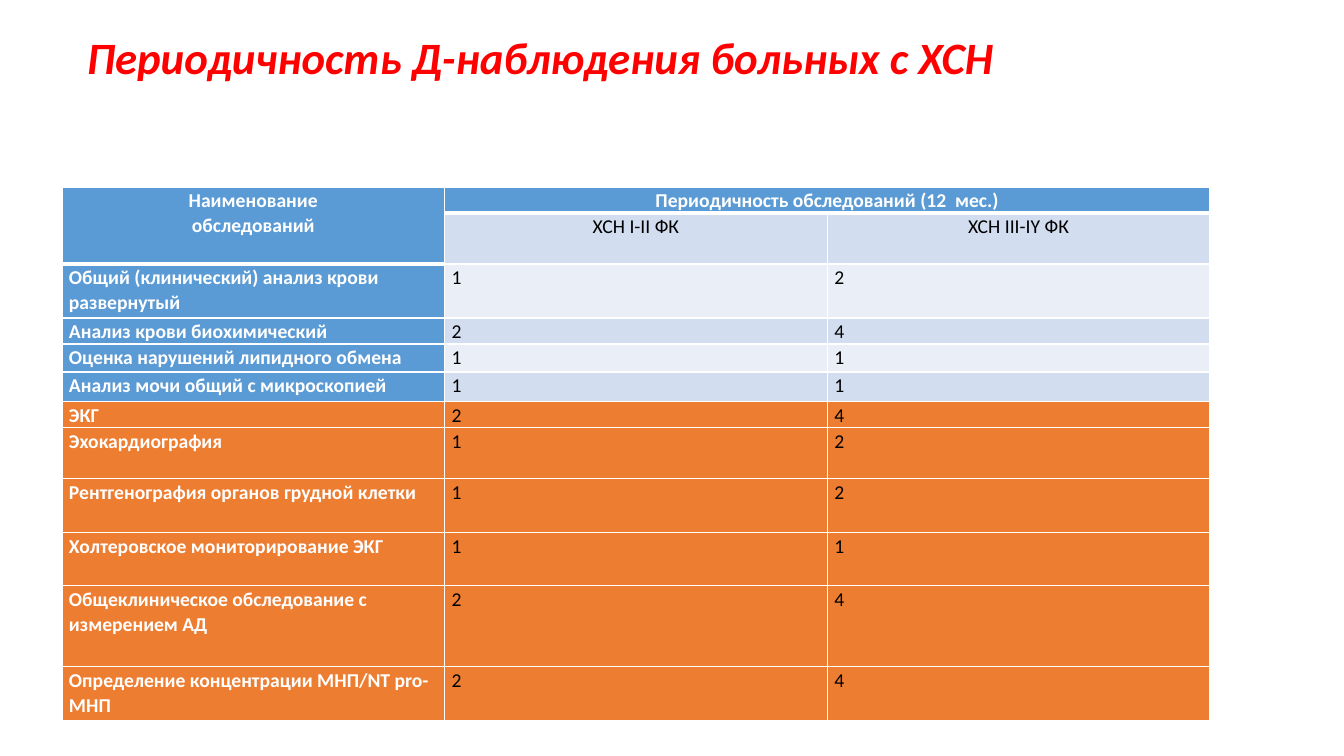
import dataclasses

import lxml.etree
import pptx
import pptx.dml.color
import pptx.enum.text
import pptx.oxml.ns
import pptx.util

EMU_PER_PX = 914400 / 100.8
ROW_HEIGHTS = [26, 51, 54, 26, 28, 30, 26, 51, 54, 53, 81, 54]
TITLE = "Периодичность Д-наблюдения больных с ХСН"
HEADER = ["Наименование\nобследований", "Периодичность обследований (12  мес.)", ""]
SUBHEADER = ["", "ХСН I-II ФК", "ХСН III-IY ФК"]
LAB_TESTS = [
    ["Общий (клинический) анализ крови развернутый", "1", "2"],
    ["Анализ крови биохимический", "2", "4"],
    ["Оценка нарушений липидного обмена", "1", "1"],
    ["Анализ мочи общий с микроскопией", "1", "1"],
]
EXAMINATIONS = [
    ["ЭКГ", "2", "4"],
    ["Эхокардиография", "1", "2"],
    ["Рентгенография органов грудной клетки", "1", "2"],
    ["Холтеровское мониторирование ЭКГ", "1", "1"],
    ["Общеклиническое обследование с измерением АД", "2", "4"],
    ["Определение концентрации МНП/NT pro-МНП", "2", "4"],
]


@dataclasses.dataclass(frozen=True)
class Theme:
    """Colours and type of the slide."""

    font: str = "Calibri"
    title_size: int = 32
    table_size: int = 14
    title: str = "FF0000"
    white: str = "FFFFFF"
    black: str = "000000"
    blue: str = "5B9BD5"
    orange: str = "ED7D31"
    bands: tuple = ("EAEFF7", "D2DEEF")


THEME = Theme()


def px(length):
    """Turn a length in px into EMU."""
    return pptx.util.Emu(round(length * EMU_PER_PX))


def format_para(para, size, colour, bold, italic=False):
    """Set the type of every run in a paragraph."""
    for span in para.runs:
        span.font.name = THEME.font
        span.font.size = pptx.util.Pt(size)
        span.font.bold = bold
        span.font.italic = italic
        span.font.color.rgb = pptx.dml.color.RGBColor.from_string(colour)


def set_borders(cell, bottom_width):
    """Draw white lines of 1 pt round a cell, with a chosen bottom line."""
    properties = cell._tc.get_or_add_tcPr()
    qn = pptx.oxml.ns.qn
    widths = {"a:lnL": 1, "a:lnR": 1, "a:lnT": 1, "a:lnB": bottom_width}
    for index, (tag, width) in enumerate(widths.items()):
        line = lxml.etree.Element(qn(tag), w=str(pptx.util.Pt(width)))
        fill = lxml.etree.SubElement(line, qn("a:solidFill"))
        lxml.etree.SubElement(fill, qn("a:srgbClr"), val=THEME.white)
        properties.insert(index, line)


def fill_cell(cell, text, fill, strong, centred, bottom_width):
    """Give a cell its words, fill and borders."""
    cell.margin_left = cell.margin_right = px(7)
    cell.margin_top = cell.margin_bottom = 0
    cell.fill.solid()
    cell.fill.fore_color.rgb = pptx.dml.color.RGBColor.from_string(fill)
    set_borders(cell, bottom_width)
    cell.text_frame.text = text
    colour = THEME.white if strong else THEME.black
    for para in cell.text_frame.paragraphs:
        para.line_spacing = 1.07
        if centred:
            para.alignment = pptx.enum.text.PP_ALIGN.CENTER
        format_para(para, THEME.table_size, colour, strong)


def add_title(page, left, top, width, height):
    """Place the title in its box."""
    box = page.shapes.add_textbox(px(left), px(top), px(width), px(height))
    frame = box.text_frame
    frame.word_wrap = True
    frame.vertical_anchor = pptx.enum.text.MSO_ANCHOR.MIDDLE
    frame.text = TITLE
    para = frame.paragraphs[0]
    para.line_spacing = 0.9
    format_para(para, THEME.title_size, THEME.title, True, True)


def add_schedule(page, left, top, width):
    """Place the examination table in its box."""
    rows = [HEADER, SUBHEADER] + LAB_TESTS + EXAMINATIONS
    columns = len(HEADER)
    frame = page.shapes.add_table(
        len(rows), columns, px(left), px(top), px(width), px(sum(ROW_HEIGHTS)))
    table = frame.table
    table.first_row = table.horz_banding = False
    for column in table.columns:
        column.width = px(width / columns)
    first_examination = len(rows) - len(EXAMINATIONS)
    for row, texts in enumerate(rows):
        table.rows[row].height = px(ROW_HEIGHTS[row])
        for column, text in enumerate(texts):
            strong = row == 0 or column == 0
            if row >= first_examination:
                fill = THEME.orange
            else:
                fill = THEME.blue if strong else THEME.bands[row % 2]
            bottom_width = 3 if row == 0 or (row == 1 and column == 0) else 1
            fill_cell(table.cell(row, column), text, fill, strong, row < 2, bottom_width)
    table.cell(0, 0).merge(table.cell(1, 0))
    table.cell(0, 1).merge(table.cell(0, 2))


def main():
    """Build the slide and save it."""
    deck = pptx.Presentation()
    deck.slide_width, deck.slide_height = px(1344), px(756)
    page = deck.slides.add_slide(deck.slide_layouts[6])
    add_title(page, 77, 15, 1159, 90)
    add_schedule(page, 62, 187, 1148)
    deck.save("out.pptx")


if __name__ == "__main__":
    main()
